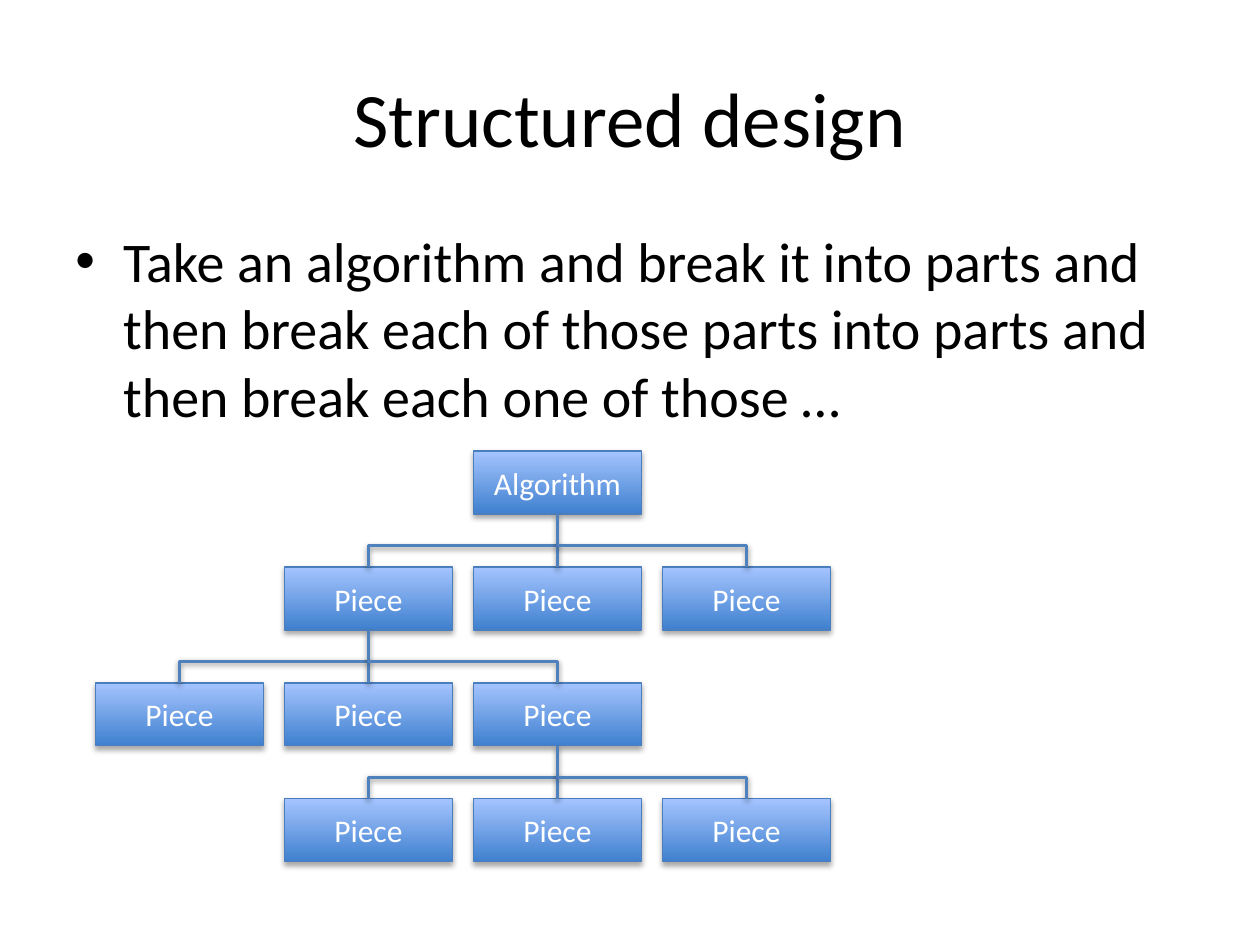
from lxml.etree import SubElement
from pptx import Presentation
from pptx.dml.color import RGBColor
from pptx.enum.shapes import MSO_CONNECTOR as Connector, MSO_SHAPE as Shape
from pptx.enum.text import MSO_ANCHOR as Anchor, PP_ALIGN as Align
from pptx.oxml.ns import qn
from pptx.util import Inches, Pt

TITLE = "Structured design"
BODY = ("Take an algorithm and break it into parts and then break each of "
        "those parts into parts and then break each one of those …")
ROOT = ("Algorithm", 2)  # label, grid column
# Each level: labels, column of the first box, column of the parent above.
LEVELS = [
    (("Piece", "Piece", "Piece"), 1, 2),
    (("Piece", "Piece", "Piece"), 0, 1),
    (("Piece", "Piece", "Piece"), 1, 2),
]

THEME = {
    "font": "Calibri",
    "text": "000000", "box_text": "FFFFFF",
    "gradient": ("3F80CE", "A4C4FF"),
    "box_line": "4B7EBC", "connector": "4F81BD",
    "title_size": 44, "body_size": 32, "box_size": 18,
    "box_line_width": 0.75, "connector_width": 2,
    "box_shadow": {"alpha": 35, "distance": 1.8},
    "connector_shadow": {"alpha": 38, "distance": 1.6},
    "shadow_blur": 3.15,
}

SLIDE_W, SLIDE_H = 10, 7.5
MARGIN = SLIDE_W * 0.05
GRID_LEFT, GRID_TOP = 0.76, 3.58
COLUMN, ROW = 1.5, 0.92
BOX_W, BOX_H = 1.33, 0.5
BUS_GAP = 0.17  # from the horizontal line down to the boxes


def write(shape, text, size, color, align, anchor, **paragraph_format):
    frame = shape.text_frame
    for name, value in {"word_wrap": True, "vertical_anchor": anchor}.items():
        setattr(frame, name, value)
    paragraph = frame.paragraphs[0]
    for name, value in {"alignment": align, **paragraph_format}.items():
        setattr(paragraph, name, value)
    run = paragraph.add_run()
    run.text = text
    for name, value in {"name": THEME["font"], "size": Pt(size)}.items():
        setattr(run.font, name, value)
    run.font.color.rgb = RGBColor.from_string(color)
    return paragraph


def add_bullet(paragraph, indent):
    properties = paragraph._p.get_or_add_pPr()
    properties.set("marL", str(Inches(indent)))
    properties.set("indent", str(-Inches(indent)))
    SubElement(properties, qn("a:buFont"), typeface="Arial")
    SubElement(properties, qn("a:buChar"), char="•")


def set_line_and_shadow(shape, color, width, shadow):
    shape.line.color.rgb = RGBColor.from_string(color)
    shape.line.width = Pt(width)
    effects = SubElement(shape._element.spPr, qn("a:effectLst"))
    outer = SubElement(effects, qn("a:outerShdw"), rotWithShape="0", dir="5400000",
                       blurRad=str(Pt(THEME["shadow_blur"])),
                       dist=str(Pt(shadow["distance"])))
    black = SubElement(outer, qn("a:srgbClr"), val="000000")
    SubElement(black, qn("a:alpha"), val=str(shadow["alpha"] * 1000))


def add_box(slide, label, column, row):
    box = slide.shapes.add_shape(
        Shape.RECTANGLE, Inches(GRID_LEFT + column * COLUMN),
        Inches(GRID_TOP + row * ROW), Inches(BOX_W), Inches(BOX_H))
    box.fill.gradient()
    box.fill.gradient_angle = 90
    for stop, color in zip(box.fill.gradient_stops, THEME["gradient"]):
        stop.color.rgb = RGBColor.from_string(color)
    set_line_and_shadow(box, THEME["box_line"], THEME["box_line_width"],
                        THEME["box_shadow"])
    write(box, label, THEME["box_size"], THEME["box_text"], Align.CENTER, Anchor.MIDDLE)
    return box


def connect(slide, parent, child):
    """Drop straight to a child below, or branch sideways off the drop."""
    start_x = parent.left + parent.width // 2
    end_x = child.left + child.width // 2
    straight = start_x == end_x
    start_y = parent.top + parent.height if straight else child.top - Inches(BUS_GAP)
    kind = Connector.STRAIGHT if straight else Connector.ELBOW
    connector = slide.shapes.add_connector(kind, start_x, start_y, end_x, child.top)
    if straight:
        connector.begin_connect(parent, 2)
        connector.end_connect(child, 0)
    else:  # a single corner instead of two
        connector._element.spPr.find(qn("a:prstGeom")).set("prst", "bentConnector2")
    set_line_and_shadow(connector, THEME["connector"], THEME["connector_width"],
                        THEME["connector_shadow"])


def add_text_box(slide, top, height):
    return slide.shapes.add_textbox(Inches(MARGIN), Inches(top),
                                    Inches(SLIDE_W - 2 * MARGIN), Inches(height))


def main():
    presentation = Presentation()
    presentation.slide_width, presentation.slide_height = Inches(SLIDE_W), Inches(SLIDE_H)
    slide = presentation.slides.add_slide(presentation.slide_layouts[6])

    write(add_text_box(slide, SLIDE_H * 0.04, 1.25), TITLE, THEME["title_size"],
          THEME["text"], Align.CENTER, Anchor.MIDDLE)
    body = write(add_text_box(slide, 1.75, SLIDE_H * 0.66), BODY, THEME["body_size"],
                 THEME["text"], Align.LEFT, Anchor.TOP,
                 space_before=Pt(THEME["body_size"] * 0.2))
    add_bullet(body, 0.38)

    label, column = ROOT
    above = {column: add_box(slide, label, column, 0)}
    for row, (labels, first, parent_column) in enumerate(LEVELS, start=1):
        boxes = {column: add_box(slide, label, column, row)
                 for column, label in enumerate(labels, start=first)}
        for child in boxes.values():
            connect(slide, above[parent_column], child)
        above = boxes

    presentation.save("out.pptx")


if __name__ == "__main__":
    main()
